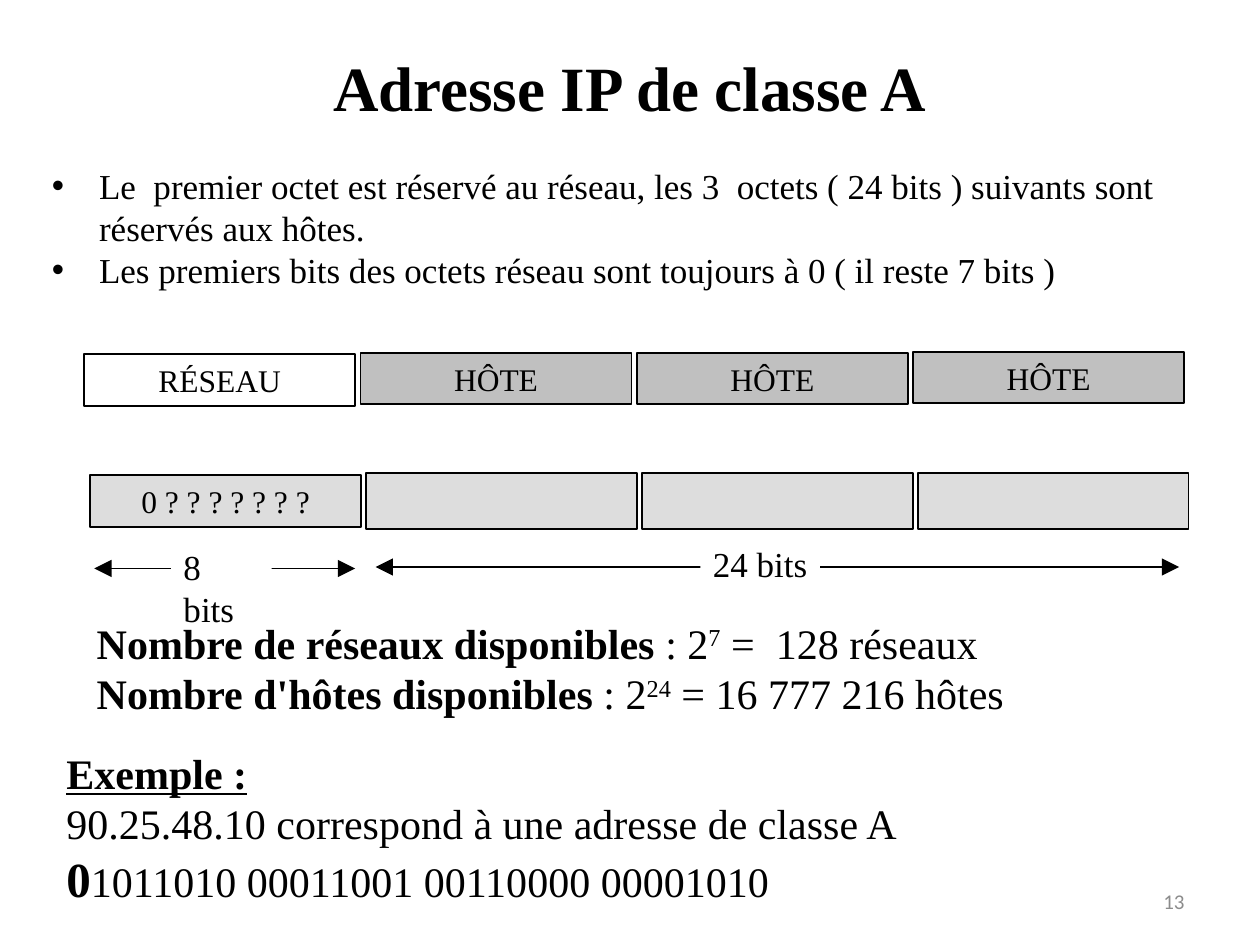
from dataclasses import dataclass
from typing import Optional

from lxml.etree import SubElement
from pptx import Presentation
from pptx.dml.color import RGBColor as RGB
from pptx.enum.shapes import MSO_CONNECTOR as CONN, MSO_SHAPE as SHAPE
from pptx.enum.text import MSO_ANCHOR as ANCHOR, MSO_AUTO_SIZE as AUTO, PP_ALIGN as ALIGN
from pptx.oxml.ns import qn
from pptx.util import Cm, Pt


@dataclass(frozen=True)
class Theme:
    serif: str = "Times New Roman"
    sans: str = "Calibri"
    ink: RGB = RGB(0x00, 0x00, 0x00)
    white: RGB = RGB(0xFF, 0xFF, 0xFF)
    host: RGB = RGB(0xC0, 0xC0, 0xC0)
    bits: RGB = RGB(0xDD, 0xDD, 0xDD)
    muted: RGB = RGB(0x8C, 0x8C, 0x8C)
    title: int = 36
    big: int = 28
    text: int = 24
    body: int = 20
    cell: int = 18
    small: int = 12
    line: int = 1


@dataclass(frozen=True)
class Box:
    """Position and size in centimetres."""
    left: float
    top: float
    width: float
    height: float

    def emu(self) -> tuple:
        return Cm(self.left), Cm(self.top), Cm(self.width), Cm(self.height)


@dataclass(frozen=True)
class Octet:
    text: str
    fill: RGB
    top: float
    height: float


@dataclass(frozen=True)
class Span:
    """A double arrow with its label."""
    start: float
    end: float
    y: float
    text: str
    label: Box


@dataclass(frozen=True)
class Part:
    """A piece of a line of text."""
    text: str
    bold: Optional[bool] = None
    underline: Optional[bool] = None
    size: Optional[int] = None
    raised: bool = False


T = Theme()

BULLETS = [
    "Le  premier octet est réservé au réseau, les 3  octets ( 24 bits ) suivants sont réservés aux hôtes.",
    "Les premiers bits des octets réseau sont toujours à 0 ( il reste 7 bits )",
]
NAMES = [
    Octet("RÉSEAU", T.white, 7.14, 1.04),
    Octet("HÔTE", T.host, 7.11, 1.04),
    Octet("HÔTE", T.host, 7.11, 1.04),
    Octet("HÔTE", T.host, 7.09, 1.04),
]
BITS = [Octet("0 ? ? ? ? ? ? ?", T.bits, 9.58, 1.04)] + [Octet("", T.bits, 9.53, 1.14)] * 3
SPANS = [
    Span(7.57, 23.77, 11.43, "24 bits", Box(14.12, 10.82, 2.41, 1.09)),
    Span(1.9, 7.16, 11.46, "8 bits", Box(3.45, 10.87, 2.03, 1.09)),
]
COUNTS = [
    [Part("Nombre de réseaux disponibles", bold=True), Part(" : 2"),
     Part("7", raised=True), Part(" =  128 réseaux")],
    [Part("Nombre d'hôtes disponibles", bold=True), Part(" : 2"),
     Part("24", raised=True), Part(" = 16 777 216 hôtes")],
]
EXAMPLE = [
    [Part("Exemple :", bold=True, underline=True)],
    [Part("90.25.48.10 correspond à une adresse de classe A")],
    [Part("0", bold=True, size=T.big), Part("1011010 00011001 00110000 00001010")],
]


def style(p, size: int, color: RGB = T.ink, face: str = T.serif, align=ALIGN.LEFT) -> None:
    p.alignment = align
    p.font.name, p.font.size = face, Pt(size)
    p.font.color.rgb = color


def place(sp, box: Box) -> None:
    sp.left, sp.top, sp.width, sp.height = box.emu()


def add_rect(slide, box: Box, fill: RGB, text: str, size: int, framed: bool):
    sp = slide.shapes.add_shape(SHAPE.RECTANGLE, *box.emu())
    sp.shadow.inherit = False
    sp.fill.solid()
    sp.fill.fore_color.rgb = fill
    if framed:
        sp.line.color.rgb = T.ink
        sp.line.width = Pt(T.line)
    else:
        sp.line.fill.background()
    if text:
        tf = sp.text_frame
        tf.word_wrap = True
        tf.vertical_anchor = ANCHOR.MIDDLE if framed else ANCHOR.TOP
        tf.text = text
        style(tf.paragraphs[0], size, align=ALIGN.CENTER if framed else ALIGN.LEFT)
    return sp


def add_octets(slide, octets: list[Octet], left: float, pitch: float) -> None:
    for i, o in enumerate(octets):
        add_rect(slide, Box(left + i * pitch, o.top, 5.46, o.height), o.fill, o.text, T.cell, True)


def add_span(slide, span: Span) -> None:
    y = Cm(span.y)
    line = slide.shapes.add_connector(CONN.STRAIGHT, Cm(span.start), y, Cm(span.end), y)
    line.line.color.rgb = T.ink
    line.line.width = Pt(T.line)
    ln = line.line._get_or_add_ln()
    for end in ("a:headEnd", "a:tailEnd"):
        SubElement(ln, qn(end), type="triangle", w="lg", len="lg")
    SubElement(line._element.spPr, qn("a:effectLst"))
    add_rect(slide, span.label, T.white, span.text, T.body, False)


def add_lines(slide, box: Box, lines: list[list[Part]], wrap: bool = False):
    tf = slide.shapes.add_textbox(*box.emu()).text_frame
    tf.word_wrap = wrap
    for i, parts in enumerate(lines):
        p = tf.paragraphs[0] if i == 0 else tf.add_paragraph()
        style(p, T.text)
        for part in parts:
            r = p.add_run()
            r.text = part.text
            r.font.bold, r.font.underline = part.bold, part.underline
            if part.size:
                r.font.size = Pt(part.size)
            if part.raised:
                r._r.get_or_add_rPr().set("baseline", "30000")
    return tf


def main() -> None:
    prs = Presentation()
    prs.slide_width, prs.slide_height = Cm(25.4), Cm(19.05)
    slide = prs.slides.add_slide(prs.slide_layouts[1])

    # Title and bullets
    title, body = slide.placeholders
    place(title, Box(1.27, 0.76, 22.86, 1.96))
    title.text_frame.text = "Adresse IP de classe A"
    title.text_frame.vertical_anchor = ANCHOR.MIDDLE
    p = title.text_frame.paragraphs[0]
    style(p, T.title, align=ALIGN.CENTER)
    p.font.bold = True

    place(body, Box(0.79, 3.18, 23.83, 4.37))
    body.text_frame.text = "\n".join(BULLETS)
    body.text_frame.auto_size = AUTO.NONE
    for p in body.text_frame.paragraphs:
        p.space_before = Pt(0)
        style(p, T.body)

    # Address layout: octet names, bits and their widths
    add_octets(slide, NAMES, 1.7, 5.57)
    add_octets(slide, BITS, 1.82, 5.56)
    for span in SPANS:
        add_span(slide, span)

    # Counts and example
    add_lines(slide, Box(1.7, 12.32, 19.28, 2.31), COUNTS)
    add_lines(slide, Box(1.09, 14.94, 17.42, 3.51), EXAMPLE)

    # Page number
    tf = add_lines(slide, Box(18.21, 17.65, 5.92, 1.02), [[Part("13")]], wrap=True)
    tf.vertical_anchor = ANCHOR.MIDDLE
    style(tf.paragraphs[0], T.small, T.muted, T.sans, ALIGN.RIGHT)

    prs.save("out.pptx")


if __name__ == "__main__":
    main()
